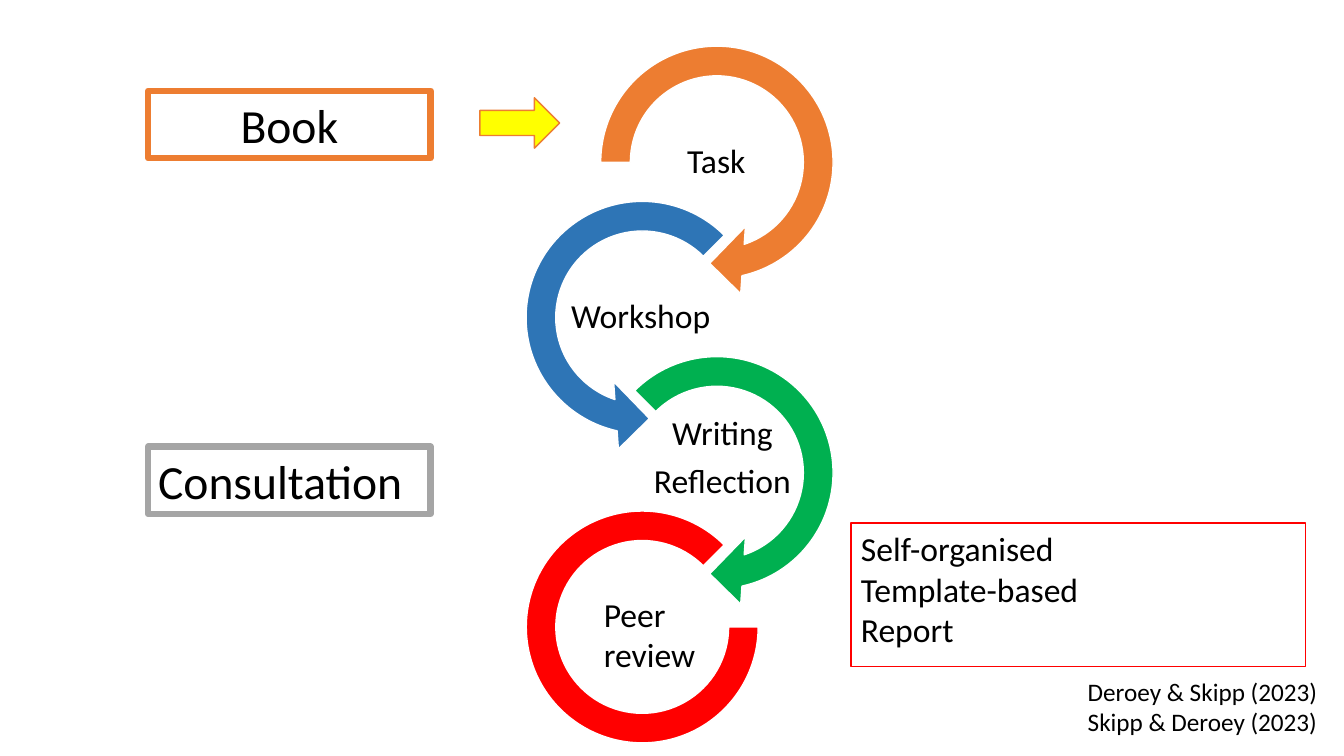
from dataclasses import dataclass, field

from pptx import Presentation
from pptx.dml.color import RGBColor
from pptx.enum.shapes import MSO_SHAPE
from pptx.enum.text import MSO_ANCHOR, PP_ALIGN
from pptx.shapes.autoshape import Shape
from pptx.slide import Slide
from pptx.util import Inches, Pt

CLOCKWISE = MSO_SHAPE.CIRCULAR_ARROW
COUNTERCLOCKWISE = MSO_SHAPE.LEFT_CIRCULAR_ARROW
BLOCK_ARC = MSO_SHAPE.BLOCK_ARC
RIGHT_ARROW = MSO_SHAPE.RIGHT_ARROW
RECTANGLE = MSO_SHAPE.RECTANGLE
TOP, MIDDLE = MSO_ANCHOR.TOP, MSO_ANCHOR.MIDDLE
LEFT, CENTER = PP_ALIGN.LEFT, PP_ALIGN.CENTER


@dataclass(frozen=True)
class Theme:
    font: str = "Calibri"
    text: str = "000000"
    white: str = "FFFFFF"
    orange: str = "ED7D31"
    blue: str = "2E75B6"
    green: str = "00B050"
    red: str = "FF0000"
    grey: str = "A5A5A5"
    yellow: str = "FFFF00"
    heading_size: float = 34
    body_size: float = 24
    citation_size: float = 18
    thin_line: float = 1
    thick_line: float = 4.5


THEME = Theme()


@dataclass(frozen=True)
class Box:
    left: float
    top: float
    width: float
    height: float

    def lengths(self) -> tuple[int, int, int, int]:
        return (Inches(self.left), Inches(self.top),
                Inches(self.width), Inches(self.height))


@dataclass(frozen=True)
class Outline:
    box: Box
    preset: MSO_SHAPE
    line: str
    fill: str | None = None
    line_width: float = THEME.thin_line
    adjustments: tuple[float, ...] = ()


@dataclass(frozen=True)
class Wording:
    lines: tuple[str, ...]
    size: float = THEME.body_size
    frame_format: dict = field(default_factory=lambda: {"vertical_anchor": TOP})
    paragraph_format: dict = field(default_factory=lambda: {"alignment": LEFT})


def draw_outline(slide: Slide, outline: Outline) -> Shape:
    shape = slide.shapes.add_shape(outline.preset, *outline.box.lengths())
    shape.shadow.inherit = False
    for index, value in enumerate(outline.adjustments):
        shape.adjustments[index] = value
    if outline.fill:
        shape.fill.solid()
        shape.fill.fore_color.rgb = RGBColor.from_string(outline.fill)
    else:
        shape.fill.background()
    shape.line.color.rgb = RGBColor.from_string(outline.line)
    shape.line.width = Pt(outline.line_width)
    return shape


def write(shape: Shape, wording: Wording) -> None:
    frame = shape.text_frame
    frame.word_wrap = True
    for name, value in wording.frame_format.items():
        setattr(frame, name, value)
    frame.text = "\n".join(wording.lines)
    for paragraph in frame.paragraphs:
        for name, value in wording.paragraph_format.items():
            setattr(paragraph, name, value)
        font = paragraph.runs[0].font
        font.name = THEME.font
        font.size = Pt(wording.size)
        font.color.rgb = RGBColor.from_string(THEME.text)


def draw_text(slide: Slide, box: Box, wording: Wording) -> None:
    write(slide.shapes.add_textbox(*box.lengths()), wording)


STAGE_PITCH = 1.54
ARROW_SIZE = 2.68
RIGHT_LOOP, LEFT_LOOP = 5.77, 5.03
STAGE_FRAME = {
    "vertical_anchor": MIDDLE,
    "margin_left": Inches(0.02), "margin_right": Inches(0.02),
    "margin_top": Inches(0.02), "margin_bottom": Inches(0.02),
}
STAGE_PARAGRAPH = {
    "alignment": CENTER, "line_spacing": 0.9,
    "space_after": Pt(0.35 * THEME.body_size),
}


@dataclass(frozen=True)
class Stage:
    lines: tuple[str, ...]
    preset: MSO_SHAPE
    loop_left: float
    color: str
    end_angle: float
    start_angle: float
    label_left: float
    label_top: float


STAGES = (
    Stage(("Task",), CLOCKWISE, RIGHT_LOOP, THEME.orange, 45, 108, 6.36, 1.24),
    Stage(("Workshop",), COUNTERCLOCKWISE, LEFT_LOOP, THEME.blue, 63, 189, 5.61, 2.78),
    Stage(("Writing", "Reflection"), CLOCKWISE, RIGHT_LOOP, THEME.green, 45, 135, 6.42, 4.17),
)

PEER_REVIEW_LOOP = Outline(Box(5.22, 5.07, 2.3, 2.3), BLOCK_ARC, THEME.white,
                           THEME.red, adjustments=(0, 189, 0.1274))

PANELS = (
    (Outline(Box(1.47, 4.43, 2.8, 0.67), RECTANGLE, THEME.grey,
             line_width=THEME.thick_line),
     Wording(("Consultation",), THEME.heading_size)),
    (Outline(Box(1.47, 0.9, 2.8, 0.67), RECTANGLE, THEME.orange,
             line_width=THEME.thick_line),
     Wording(("Book",), THEME.heading_size, paragraph_format={"alignment": CENTER})),
    (Outline(Box(8.44, 5.19, 4.51, 1.42), RECTANGLE, THEME.red, THEME.white),
     Wording(("Self-organised", "Template-based", "Report"))),
)

BOOK_TO_TASK = Outline(Box(4.76, 0.97, 0.79, 0.5), RIGHT_ARROW,
                       THEME.orange, THEME.yellow)


def draw_stage(slide: Slide, index: int, stage: Stage) -> None:
    loop = Box(stage.loop_left, 0.27 + index * STAGE_PITCH, ARROW_SIZE, ARROW_SIZE)
    angles = (0.1098, 11.423, stage.end_angle, stage.start_angle, 0.125)
    draw_outline(slide, Outline(loop, stage.preset, THEME.white, stage.color,
                                adjustments=angles))
    draw_text(slide, Box(stage.label_left, stage.label_top, 1.49, 0.75),
              Wording(stage.lines, frame_format=STAGE_FRAME,
                      paragraph_format=STAGE_PARAGRAPH))


def main() -> None:
    presentation = Presentation()
    presentation.slide_width = Inches(13.33)
    presentation.slide_height = Inches(7.5)
    slide = presentation.slides.add_slide(presentation.slide_layouts[6])
    for index, stage in enumerate(STAGES):
        draw_stage(slide, index, stage)
    draw_outline(slide, PEER_REVIEW_LOOP)
    draw_text(slide, Box(5.89, 5.84, 1.69, 0.91), Wording(("Peer", "review")))
    draw_text(slide, Box(10.69, 6.66, 2.64, 0.71),
              Wording(("Deroey & Skipp (2023)", "Skipp & Deroey (2023)"),
                      THEME.citation_size))
    for outline, wording in PANELS:
        write(draw_outline(slide, outline), wording)
    draw_outline(slide, BOOK_TO_TASK)
    presentation.save("out.pptx")


if __name__ == "__main__":
    main()
